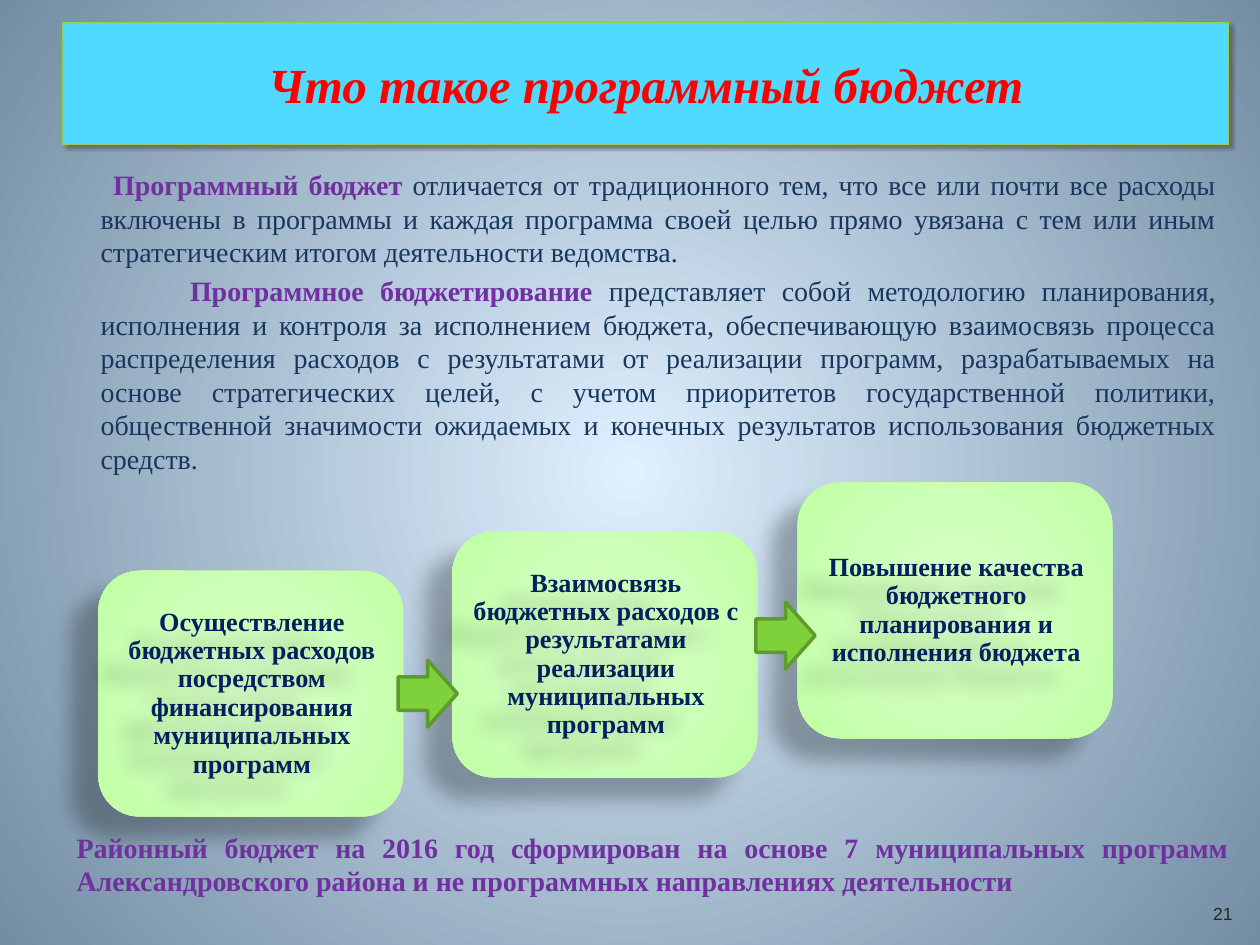
from typing import NamedTuple

import pptx
import pptx.dml.color
import pptx.enum.shapes
import pptx.enum.text
import pptx.oxml
import pptx.oxml.ns
import pptx.util
from pptx.util import Inches

SHAPE = pptx.enum.shapes.MSO_SHAPE
ALIGN = pptx.enum.text.PP_ALIGN
ANCHOR = pptx.enum.text.MSO_ANCHOR
SERIF = "Times New Roman"
PURPLE, NAVY, SLATE = "7030A0", "002060", "17375E"
CARD_STOPS = [(0, "D7FFC6"), (50, "CEFFB9"), (97, "C0FFA4"), (100, "BCFF9E")]


class Card(NamedTuple):
    x: float
    y: float
    w: float
    h: float
    text: str


class Run(NamedTuple):
    text: str
    color: str
    bold: bool = False


class Shadow(NamedTuple):
    color: str
    opacity: int
    blur: float
    distance: float
    angle: int


CARD_SHADOW = Shadow("000000", 28, 11.8, 19.7, 141)
CARDS = [
    Card(0.78, 4.53, 2.42, 1.95, "Осуществление бюджетных расходов посредством "
         "финансирования муниципальных программ"),
    Card(3.59, 4.22, 2.42, 1.95, "Взаимосвязь бюджетных расходов с результатами "
         "реализации муниципальных программ"),
    Card(6.33, 3.83, 2.5, 2.03, "Повышение качества бюджетного планирования "
         "и исполнения бюджета"),
]
ARROWS = [(3.16, 5.24), (6, 4.78)]


def rgb(color: str):
    return pptx.dml.color.RGBColor.from_string(color)


def radial_fill(fill, parent, stops) -> None:
    """Turn a fill into a circular gradient; parent is the XML that holds it."""
    fill.gradient()
    grad = parent.find(".//" + pptx.oxml.ns.qn("a:gradFill"))
    gs = "".join(f'<a:gs pos="{pos * 1000}"><a:srgbClr val="{color}"/></a:gs>'
                 for pos, color in stops)
    new = pptx.oxml.parse_xml(
        f'<a:gradFill {pptx.oxml.ns.nsdecls("a")} rotWithShape="1"><a:gsLst>{gs}</a:gsLst>'
        '<a:path path="circle"><a:fillToRect l="50000" t="50000" r="50000" b="50000"/>'
        '</a:path></a:gradFill>')
    grad.getparent().replace(grad, new)


def add_shadow(sp, shadow: Shadow) -> None:
    spPr = sp.element.spPr
    for old in spPr.findall(pptx.oxml.ns.qn("a:effectLst")):
        spPr.remove(old)
    spPr.append(pptx.oxml.parse_xml(
        f'<a:effectLst {pptx.oxml.ns.nsdecls("a")}>'
        f'<a:outerShdw blurRad="{pptx.util.Pt(shadow.blur)}" '
        f'dist="{pptx.util.Pt(shadow.distance)}" dir="{shadow.angle * 60000}" '
        f'algn="ctr" rotWithShape="0"><a:srgbClr val="{shadow.color}">'
        f'<a:alpha val="{shadow.opacity * 1000}"/></a:srgbClr></a:outerShdw></a:effectLst>'))


def add_shape(s, kind, x, y, w, h, fill=None, line=None, line_width=1.0):
    sp = s.shapes.add_shape(kind, Inches(x), Inches(y), Inches(w), Inches(h))
    sp.shadow.inherit = False
    if fill:
        sp.fill.solid()
        sp.fill.fore_color.rgb = rgb(fill)
    if line:
        sp.line.color.rgb = rgb(line)
        sp.line.width = pptx.util.Pt(line_width)
    else:
        sp.line.fill.background()
    return sp


def add_box(s, x, y, w, h):
    return s.shapes.add_textbox(Inches(x), Inches(y), Inches(w), Inches(h))


def write(sp, runs, *, size, font=SERIF, align=ALIGN.JUSTIFY, anchor=ANCHOR.TOP,
          italic=False, spacing=None, margins=(0.1, 0.05), left=0.0, indent=0.0,
          before=0, more=False) -> None:
    """Write one paragraph of runs; more adds it after the existing text."""
    tf = sp.text_frame
    tf.word_wrap = True
    tf.vertical_anchor = anchor
    tf.margin_left = tf.margin_right = Inches(margins[0])
    tf.margin_top = tf.margin_bottom = Inches(margins[1])
    p = tf.add_paragraph() if more else tf.paragraphs[0]
    p.alignment = align
    if spacing:
        p.line_spacing = spacing
    if before:
        p.space_before = pptx.util.Pt(before)
    if left:
        pPr = p._p.get_or_add_pPr()
        pPr.set("marL", str(Inches(left)))
        pPr.set("indent", str(Inches(indent)))
    for run in runs:
        r = p.add_run()
        r.text = run.text
        r.font.name = font
        r.font.size = pptx.util.Pt(size)
        r.font.bold = run.bold
        r.font.italic = italic
        r.font.color.rgb = rgb(run.color)


def add_card(s, card: Card) -> None:
    sp = add_shape(s, SHAPE.ROUNDED_RECTANGLE, card.x, card.y, card.w, card.h)
    radial_fill(sp.fill, sp.element.spPr, CARD_STOPS)
    add_shadow(sp, CARD_SHADOW)
    inset = 0.09
    label = add_box(s, card.x + inset, card.y + inset,
                    card.w - 2 * inset + 0.02, card.h - 2 * inset)
    add_shadow(label, CARD_SHADOW)
    write(label, [Run(card.text, NAVY, True)], size=15, align=ALIGN.CENTER,
          anchor=ANCHOR.MIDDLE, spacing=0.9, margins=(0.06, 0.03))


def main() -> None:
    prs = pptx.Presentation()
    prs.slide_width, prs.slide_height = Inches(10), Inches(7.5)
    s = prs.slides.add_slide(prs.slide_layouts[6])
    radial_fill(s.background.fill, s.element, [(0, "DFF0FF"), (100, "738DA3")])

    title = add_shape(s, SHAPE.RECTANGLE, 0.5, 0.18, 9.25, 0.97, "51DAFF", "92D050", 0.75)
    add_shadow(title, Shadow("595959", 71, 2, 2, 40))
    write(title, [Run("Что такое программный бюджет", "FF0000", True)], size=28,
          align=ALIGN.CENTER, anchor=ANCHOR.MIDDLE, italic=True)

    body = add_box(s, 0.5, 1.18, 9.25, 5.52)
    body_format = dict(size=16, left=0.2, margins=(0.1, 0.15))
    write(body, [
        Run("Программный бюджет ", PURPLE, True),
        Run("отличается от традиционного тем, что все или почти все расходы включены "
            "в программы и каждая программа своей целью прямо увязана с тем или иным "
            "стратегическим итогом деятельности ведомства.", SLATE),
    ], indent=0.1, **body_format)
    write(body, [
        Run("Программное бюджетирование ", PURPLE, True),
        Run("представляет собой методологию планирования, исполнения и контроля за "
            "исполнением бюджета, обеспечивающую взаимосвязь процесса распределения "
            "расходов с результатами от реализации программ, разрабатываемых на основе "
            "стратегических целей, с учетом приоритетов государственной политики, "
            "общественной значимости ожидаемых и конечных результатов использования "
            "бюджетных средств.", SLATE),
    ], indent=0.71, before=3, more=True, **body_format)

    write(add_box(s, 9.45, 7.05, 0.51, 0.4), [Run("21", "262626")], size=10,
          font="Arial", align=ALIGN.CENTER, anchor=ANCHOR.MIDDLE)

    for card in CARDS:
        add_card(s, card)
    for x, y in ARROWS:
        add_shape(s, SHAPE.RIGHT_ARROW, x, y, 0.47, 0.53, "7FD13B", "5E9B2C", 2)

    write(add_box(s, 0.51, 6.54, 9.34, 0.64), [
        Run("Районный бюджет на 2016 год сформирован на основе 7 муниципальных программ "
            "Александровского района и не программных направлениях деятельности",
            PURPLE, True)], size=16)

    prs.save("out.pptx")


if __name__ == "__main__":
    main()
